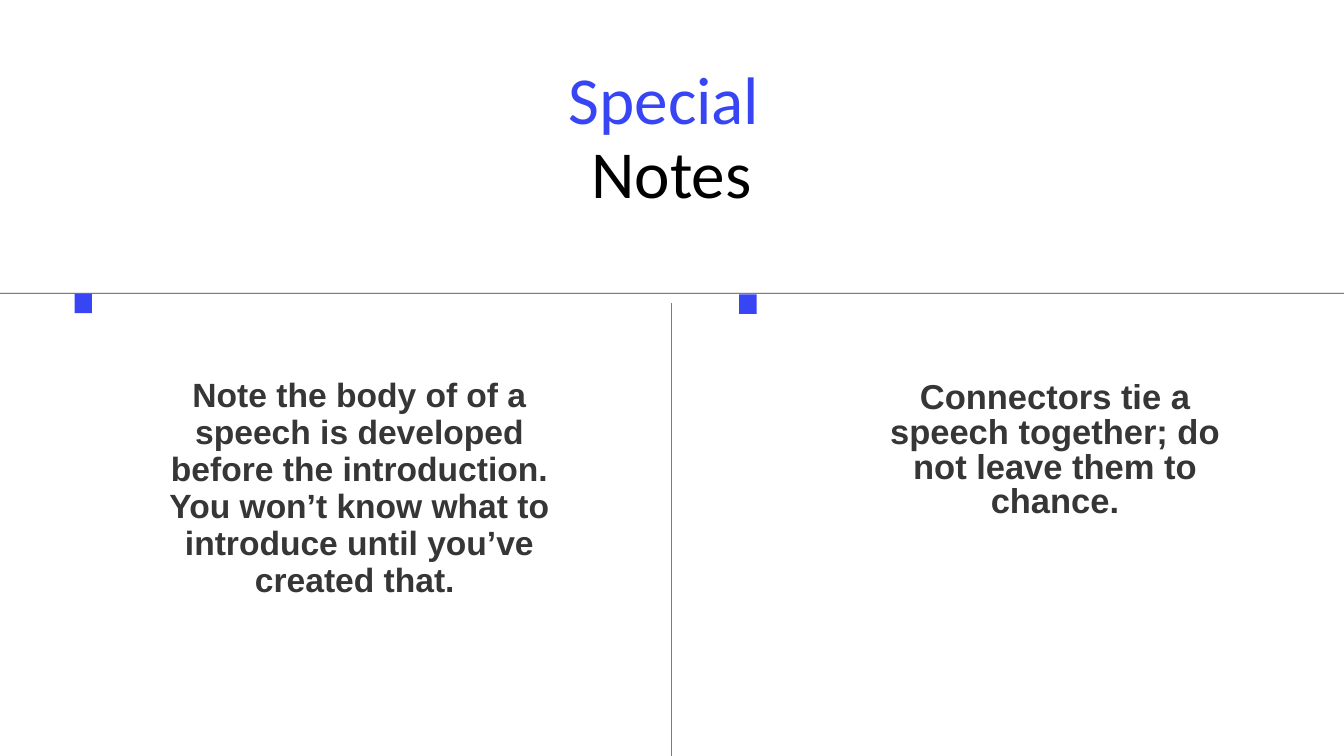
"""Build the Special Notes slide: a title above two ruled columns."""
from pptx import Presentation
from pptx.dml.color import RGBColor
from pptx.enum import shapes, text
from pptx.util import Inches, Pt

BLUE, DARK, BLACK = "3745F4", "373636", "000000"

TITLE = [("Special ", BLUE), ("Notes", BLACK)]
TITLE_PLACE = (3.83, 0.96, 12.33, 3.32)

NOTES = [
    {"note": "Note the body of of a speech is developed before the introduction. "
             "You won’t know what to introduce until you’ve created that. ",
     "place": (2.11, 5.62, 6.48, 3.93), "size": 36, "leading": 39.6,
     "marker": (1.11, 4.37)},
    {"note": "Connectors tie a speech together; do not leave them to chance.",
     "place": (13.08, 5.69, 5.24, 3.11), "size": 37, "leading": 37,
     "marker": (11, 4.38)},
]
RULES = [(0, 4.36, 20, 0.01), (9.99, 4.51, 0.01, 6.74)]
MARKER_SIZE = (0.26, 0.29)


def rgb(color):
    return RGBColor.from_string(color)


def add_block(slide, place, color):
    block = slide.shapes.add_shape(shapes.MSO_SHAPE.RECTANGLE, *map(Inches, place))
    block.shadow.inherit = False
    block.fill.solid()
    block.fill.fore_color.rgb = rgb(color)
    block.line.fill.background()


def add_centred(slide, place, lines, font, size, leading, bold=False):
    frame = slide.shapes.add_textbox(*map(Inches, place)).text_frame
    frame.word_wrap = True
    frame.margin_left = frame.margin_top = frame.margin_right = frame.margin_bottom = 0
    paragraph = frame.paragraphs[0]
    paragraph.alignment = text.PP_ALIGN.CENTER
    paragraph.line_spacing = Pt(leading)
    paragraph.font.name = font
    paragraph.font.size = Pt(size)
    paragraph.font.bold = bold
    for index, (words, color) in enumerate(lines):
        if index:
            paragraph.add_line_break()
        run = paragraph.add_run()
        run.text = words
        run.font.color.rgb = rgb(color)


def main():
    deck = Presentation()
    deck.slide_width, deck.slide_height = Inches(20), Inches(11.25)
    slide = deck.slides.add_slide(deck.slide_layouts[6])

    add_centred(slide, TITLE_PLACE, TITLE, "Calibri", 72, 79.2)
    for rule in RULES:
        add_block(slide, rule, DARK)
    for column in NOTES:
        add_block(slide, column["marker"] + MARKER_SIZE, BLUE)
        add_centred(slide, column["place"], [(column["note"], DARK)], "Arial",
                    column["size"], column["leading"], bold=True)
    deck.save("out.pptx")


if __name__ == "__main__":
    main()
